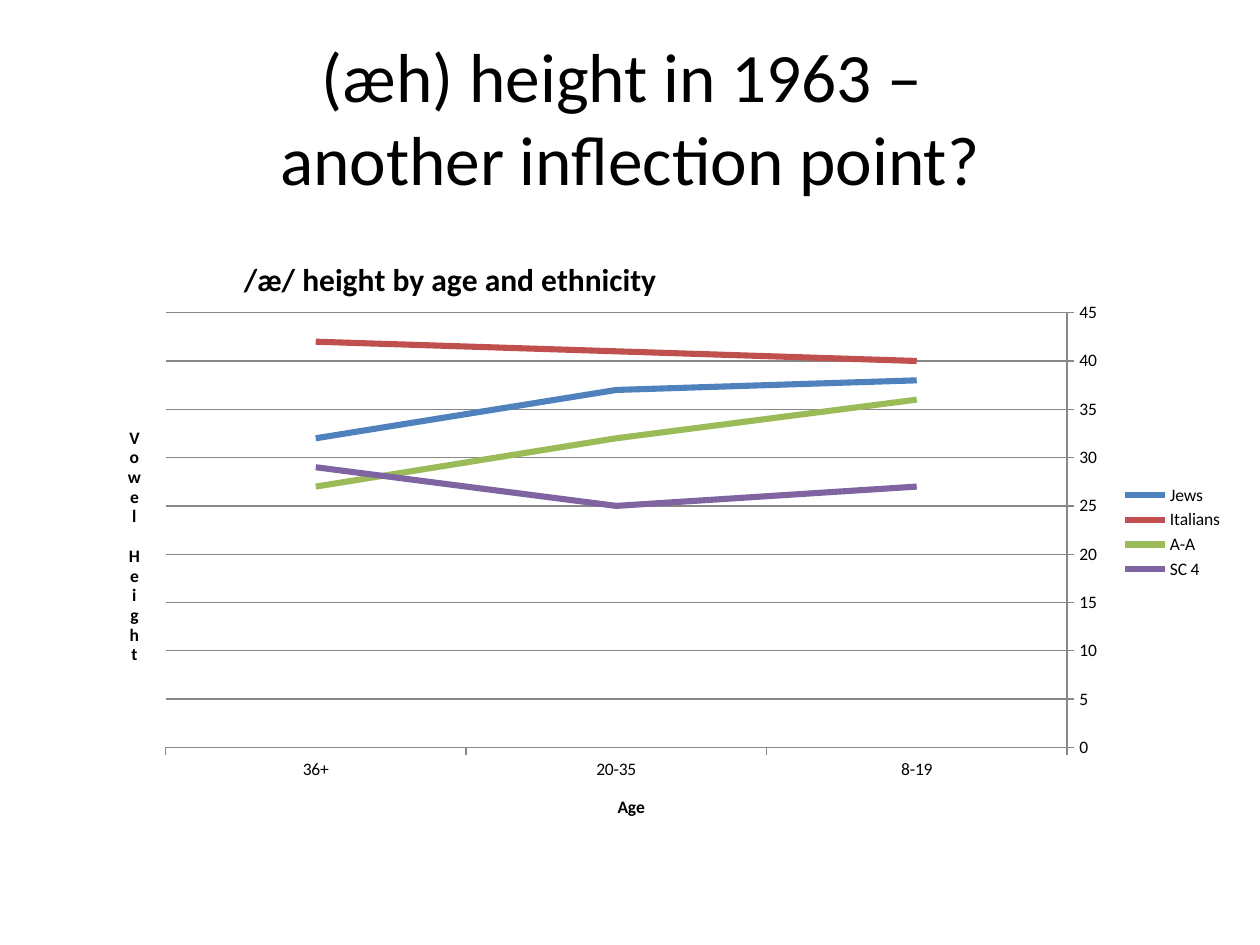
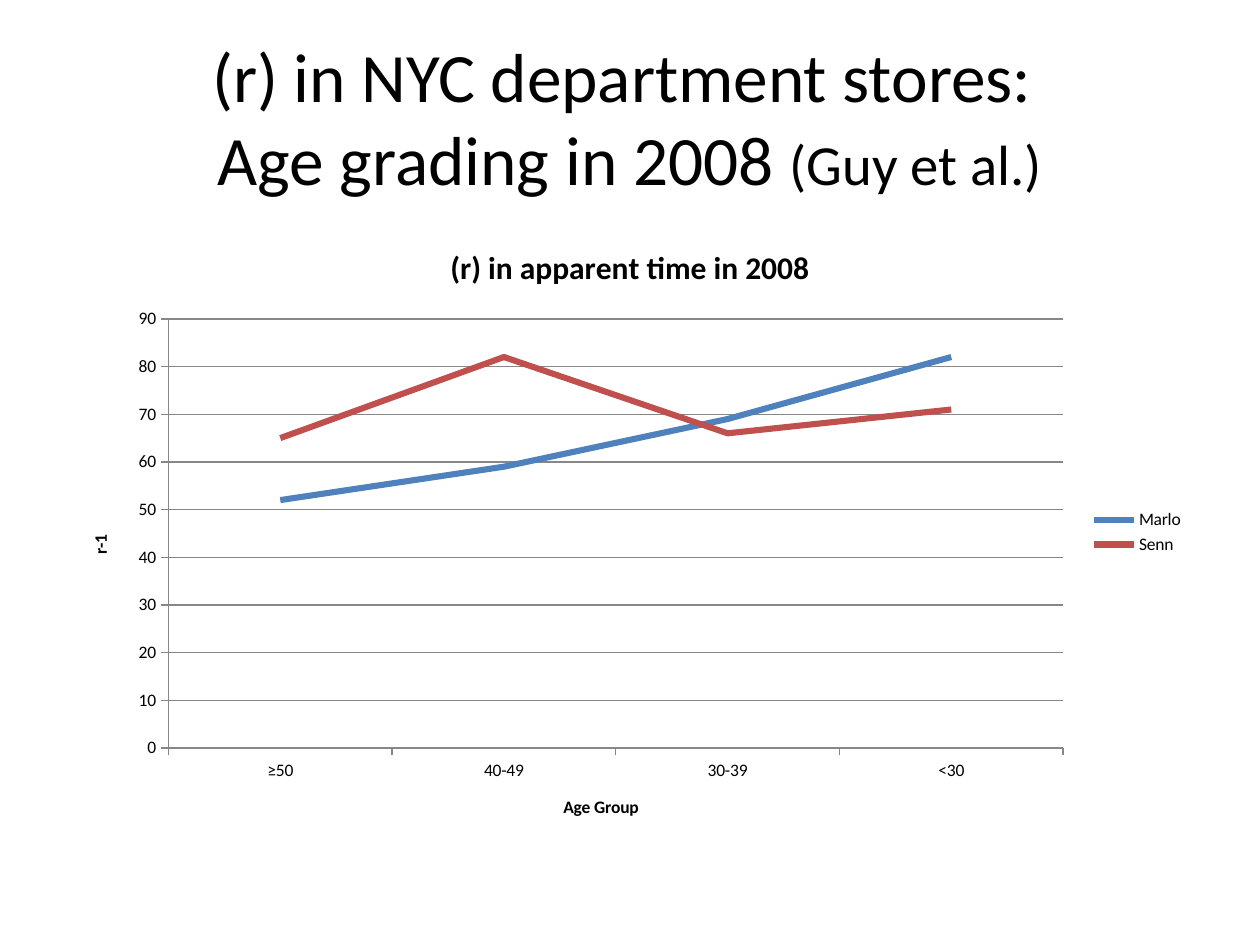
from dataclasses import dataclass

from lxml.etree import SubElement
from pptx import Presentation
from pptx.chart.data import CategoryChartData
from pptx.dml.color import RGBColor
from pptx.enum.chart import XL_CHART_TYPE as ChartType
from pptx.enum.chart import XL_LEGEND_POSITION as LegendSide
from pptx.enum.chart import XL_TICK_MARK as Tick
from pptx.enum.text import MSO_ANCHOR, PP_ALIGN
from pptx.oxml import parse_xml
from pptx.oxml.ns import nsdecls, qn
from pptx.util import Inches, Pt


@dataclass(frozen=True)
class Theme:
    font: str = "Calibri"
    ink: RGBColor = RGBColor(0, 0, 0)
    rule: RGBColor = RGBColor(0x87, 0x87, 0x87)
    series: tuple = ("4F81BD", "C0504D", "9BBB59", "8064A2")
    heading: float = 39.6
    citation: float = 32.4
    chart_title: float = 18
    label: float = 10
    series_line: float = 3.5
    rule_line: float = 0.75


theme = Theme()

topics = [
    dict(
        heading="(æh) height in 1963 – \vanother inflection point?",
        citation="",
        chart_left=0.081,
        chart_title="/æ/ height by age and ethnicity",
        title_spot=dict(x=0.12, y=0.05),
        plot=dict(x=0.056, y=0.148, w=0.795, h=0.697),
        ages=["8-19", "20-35", "36+"],
        age_title="Age",
        oldest_first=True,
        measure="Vowel Height",
        measure_turn=dict(rot="0", vert="wordArtVert"),
        measure_spot=dict(x=0.02, y=0.325),
        top=45, step=5,
        groups={"Jews": (38, 37, 32), "Italians": (40, 41, 42),
                "A-A": (36, 32, 27), "SC 4": (27, 25, 29)},
    ),
    dict(
        heading="(r) in NYC department stores: \vAge grading in 2008 ",
        citation="(Guy et al.)",
        chart_left=0.05,
        chart_title="(r) in apparent time in 2008",
        title_spot=None,
        plot=dict(x=0.093, y=0.158, w=0.789, h=0.688),
        ages=["≥50", "40-49", "30-39", "<30"],
        age_title="Age Group",
        oldest_first=False,
        measure="r-1",
        measure_turn=dict(rot="-5400000", vert="horz"),
        measure_spot=None,
        top=90, step=10,
        groups={"Marlo": (52, 59, 69, 82), "Senn": (65, 82, 66, 71)},
    ),
]


def style(font, size, bold=False):
    font.name, font.size, font.bold = theme.font, Pt(size), bold
    font.color.rgb = theme.ink


def place(part, index, spot):
    """Fix a chart part at shares of the chart's size; index is the layout's rank in it."""
    for old in part.findall(qn("c:layout")):
        part.remove(old)
    layout = parse_xml(f"<c:layout {nsdecls('c')}/>")
    manual = SubElement(layout, qn("c:manualLayout"))
    if "w" in spot:
        SubElement(manual, qn("c:layoutTarget")).set("val", "inner")
    for side in "xy":
        SubElement(manual, qn(f"c:{side}Mode")).set("val", "edge")
    for side, share in spot.items():
        SubElement(manual, qn(f"c:{side}")).set("val", str(share))
    part.insert(index, layout)


deck = Presentation()
deck.slide_width, deck.slide_height = Inches(10), Inches(7.5)
wide, high = deck.slide_width, deck.slide_height

for topic in topics:
    slide = deck.slides.add_slide(deck.slide_layouts[6])

    heading = slide.shapes.add_textbox(
        int(wide * 0.05), int(high * 0.04), int(wide * 0.9), int(high / 6)).text_frame
    heading.word_wrap = True
    heading.vertical_anchor = MSO_ANCHOR.MIDDLE
    heading.text = topic["heading"]
    line = heading.paragraphs[0]
    line.alignment = PP_ALIGN.CENTER
    for run in line.runs:
        style(run.font, theme.heading)
    if topic["citation"]:
        citation = line.add_run()
        citation.text = topic["citation"]
        style(citation.font, theme.citation)

    scores = CategoryChartData()
    scores.categories = topic["ages"]
    for group, heights in topic["groups"].items():
        scores.add_series(group, heights)
    chart = slide.shapes.add_chart(
        ChartType.LINE, int(wide * topic["chart_left"]), int(high * 0.2333),
        int(wide * 0.9), int(high * 0.66), scores).chart
    style(chart.font, theme.label)
    chart.has_legend = True
    chart.legend.position = LegendSide.RIGHT
    chart.legend.include_in_layout = False
    style(chart.legend.font, theme.label)

    chart.plots[0].vary_by_categories = False
    for group, colour in zip(chart.plots[0].series, theme.series):
        group.smooth = False
        group.format.line.width = Pt(theme.series_line)
        group.format.line.color.rgb = RGBColor.from_string(colour)

    ages, measure = chart.category_axis, chart.value_axis
    ages.reverse_order = topic["oldest_first"]
    measure.minimum_scale, measure.maximum_scale = 0, topic["top"]
    measure.major_unit = topic["step"]
    measure.has_major_gridlines = True
    for axis in (ages, measure):
        axis.major_tick_mark, axis.minor_tick_mark = Tick.OUTSIDE, Tick.NONE
        style(axis.tick_labels.font, theme.label)
    for ruled in (ages, measure, measure.major_gridlines):
        ruled.format.line.width = Pt(theme.rule_line)
        ruled.format.line.color.rgb = theme.rule

    for title, wording, size, spot in (
            (chart.chart_title, topic["chart_title"], theme.chart_title, topic["title_spot"]),
            (ages.axis_title, topic["age_title"], theme.label, None),
            (measure.axis_title, topic["measure"], theme.label, topic["measure_spot"])):
        title.text_frame.text = wording
        style(title.text_frame.paragraphs[0].runs[0].font, size, bold=True)
        if spot:
            place(title._element, 1, spot)
    turn = measure.axis_title._element.find(".//" + qn("a:bodyPr"))
    for key, value in topic["measure_turn"].items():
        turn.set(key, value)
    place(chart._chartSpace.find(".//" + qn("c:plotArea")), 0, topic["plot"])

deck.save("out.pptx")
